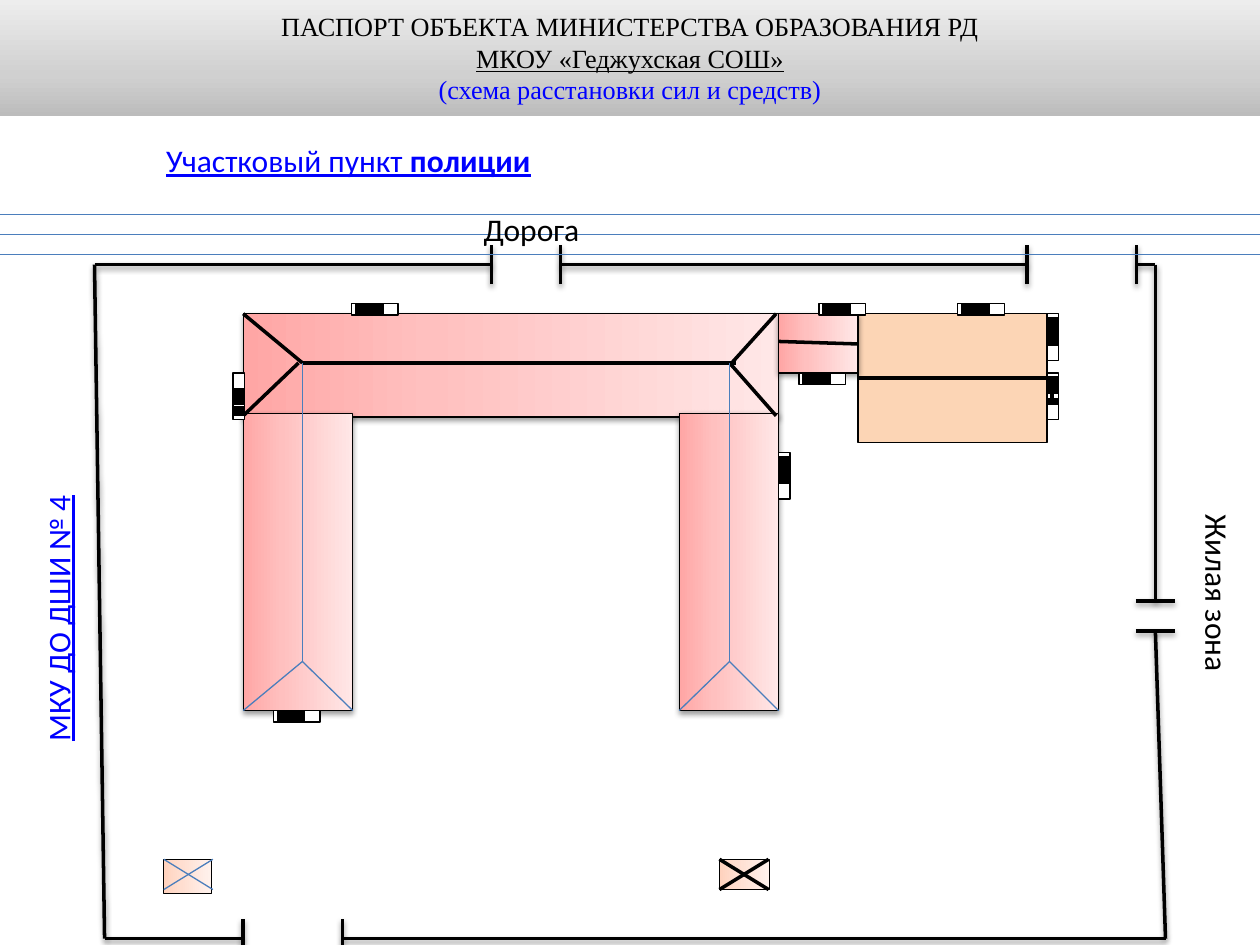
from copy import deepcopy
from dataclasses import dataclass

from lxml.etree import SubElement
from pptx import Presentation
from pptx.dml.color import RGBColor
from pptx.enum.shapes import MSO_CONNECTOR, MSO_SHAPE
from pptx.enum.text import MSO_ANCHOR, MSO_AUTO_SIZE, PP_ALIGN
from pptx.oxml.ns import qn
from pptx.util import Inches, Pt

BLACK = RGBColor(0x00, 0x00, 0x00)
WHITE = RGBColor(0xFF, 0xFF, 0xFF)
LINK_BLUE = RGBColor(0x00, 0x00, 0xFF)
LINE_BLUE = RGBColor(0x4B, 0x7E, 0xBC)
GYM = RGBColor(0xFC, 0xD5, 0xB5)
GREYS = [RGBColor.from_string(code) for code in ("BCBCBC", "D0D0D0", "EDEDED")]
REDS = [RGBColor.from_string(code) for code in ("FFA6A5", "FFC0BF", "FFE7E7")]
PEACHES = [RGBColor.from_string(code) for code in ("FFD2BD", "FFDED0", "FFF2ED")]

WIDTH, HEIGHT = Inches(10), Inches(7.5)
UNIT = WIDTH / 100  # the slide is a grid of 100 columns by 75 rows
STAIR_LENGTH, STAIR_DEPTH = 3.7, 0.9


@dataclass
class Box:
    """A region measured in grid columns and rows."""
    left: float
    top: float
    width: float
    height: float

    def area(self, left, top, width, height):
        return Box(self.left + left, self.top + top, width, height)

    def point(self, x, y):
        return self.left + x, self.top + y

    def frame(self, turn=0):
        """Position and size before a turn that leaves the box filled."""
        width, height = self.width, self.height
        if turn % 180:
            width, height = height, width
        left = self.left + (self.width - width) / 2
        top = self.top + (self.height - height) / 2
        return [round(value * UNIT) for value in (left, top, width, height)]


# Drawing helpers
def set_shadow(item, visible):
    effects = SubElement(item._element.spPr, qn("a:effectLst"))
    if visible:
        shadow = SubElement(effects, qn("a:outerShdw"), blurRad="40000",
                            dist="20000", dir="5400000", rotWithShape="0")
        color = SubElement(shadow, qn("a:srgbClr"), val="000000")
        SubElement(color, qn("a:alpha"), val="38000")


def add_line(shapes, start, end, color=BLACK, weight=0.0, shadow=False):
    ends = [round(value * UNIT) for value in (*start, *end)]
    line = shapes.add_connector(MSO_CONNECTOR.STRAIGHT, *ends)
    line.line.color.rgb = color
    line.line.width = Pt(weight)
    set_shadow(line, shadow)


def add_block(shapes, box, colors, turn=90, outline=True, shadow=False):
    """A rectangle with one plain colour or a three-step gradient."""
    block = shapes.add_shape(MSO_SHAPE.RECTANGLE, *box.frame(turn))
    block.rotation = turn
    if isinstance(colors, list):
        block.fill.gradient()
        block.fill.gradient_angle = 90
        stops = next(block._element.spPr.iter(qn("a:gsLst")))
        stops.insert(1, deepcopy(stops[0]))
        for stop, color, share in zip(block.fill.gradient_stops, colors, (0, 0.35, 1)):
            stop.color.rgb = color
            stop.position = share
    else:
        block.fill.solid()
        block.fill.fore_color.rgb = colors
    if outline:
        block.line.color.rgb = BLACK
        block.line.width = Pt(0)
    else:
        block.line.fill.background()
    set_shadow(block, shadow)
    return block


def style_run(span, font, size, color, underline=False):
    span.font.name = font
    span.font.size = Pt(size)
    span.font.color.rgb = color
    span.font.underline = underline


def add_label(page, box, text, color=BLACK, turn=0, wrap=True):
    label = page.shapes.add_textbox(*box.frame(turn))
    label.rotation = turn
    label.text_frame.word_wrap = wrap
    label.text_frame.auto_size = MSO_AUTO_SIZE.SHAPE_TO_FIT_TEXT
    para = label.text_frame.paragraphs[0]
    para.text = text
    style_run(para.runs[0], "Calibri", 18, color, color == LINK_BLUE)
    return para


def add_stairs(page, box, left, top, turn, crossed=None):
    """Steps on a porch; the step numbered crossed runs the other way."""
    sizes = (STAIR_LENGTH, STAIR_DEPTH) if turn == 90 else (STAIR_DEPTH, STAIR_LENGTH)
    porch = box.area(left, top, *sizes)
    group = page.shapes.add_group_shape()
    add_block(group.shapes, porch, WHITE, turn)
    first = 1.3 if turn == 0 else 0.4
    for step in range(8):
        offset = first + step * 2 / 7
        if step == crossed:
            start, end = (0.4, offset - 0.45), (0.4, offset + 0.45)
        elif turn == 90:
            start, end = (offset, 0), (offset, STAIR_DEPTH)
        else:
            start, end = (0, offset), (STAIR_DEPTH, offset)
        add_line(group.shapes, porch.point(*start), porch.point(*end))


# Regions
def draw_header(page, box):
    banner = add_block(page.shapes, box, GREYS, turn=0, outline=False)
    frame = banner.text_frame
    frame.word_wrap = True
    frame.vertical_anchor = MSO_ANCHOR.MIDDLE
    frame.text = ("ПАСПОРТ ОБЪЕКТА МИНИСТЕРСТВА ОБРАЗОВАНИЯ РД\n"
                  "МКОУ «Геджухская СОШ»\n(схема расстановки сил и средств)")
    styles = ((BLACK, False), (BLACK, True), (LINK_BLUE, False))
    for para, (color, underline) in zip(frame.paragraphs, styles):
        para.alignment = PP_ALIGN.CENTER
        style_run(para.runs[0], "Times New Roman", 15, color, underline)


def draw_gatehouse(page, box, color, weight):
    add_block(page.shapes, box, PEACHES)
    for start, end in ((0, 2.4), (2.4, 0)):
        add_line(page.shapes, box.point(0, start), box.point(3.9, end), color, weight)


def draw_school(page, box):
    # Buildings
    add_block(page.shapes, box.area(48.8, 0, 15, 10.2), GYM)
    for wing in ((0, 0, 42.5, 8.2), (0, 7.9, 8.7, 23.6),
                 (42.5, 0, 6.3, 4.7), (34.6, 7.9, 7.9, 23.6)):
        add_block(page.shapes, box.area(*wing), REDS, shadow=True)
    # Roof ridges
    for start, end in (((39.1, 3.9), (4.7, 3.9)), ((42.3, 8.1), (38.6, 3.9)),
                       ((42.3, 0), (38.6, 4.1)), ((4.4, 3.9), (0, 8.1)),
                       ((4.7, 3.9), (0, 0)), ((42.5, 2.2), (48.8, 2.4)),
                       ((48.8, 5.1), (63.8, 5.1))):
        add_line(page.shapes, box.point(*start), box.point(*end))
    for ridge, left, right in ((4.7, 0, 8.7), (38.6, 34.6, 42.5)):
        peak = box.point(ridge, 27.6)
        for end in ((ridge, 3.9), (left, 31.5), (right, 31.5)):
            add_line(page.shapes, peak, box.point(*end), LINE_BLUE, 0.75)
    # Porches
    for left, top, turn in ((42.5, 11, 180), (-0.8, 4.7, 0), (45.7, -0.8, 90),
                            (8.6, -0.8, 90), (44.1, 4.7, 90), (2.4, 31.5, 90),
                            (63.8, 0, 180), (56.7, -0.8, 90)):
        add_stairs(page, box, left, top, turn)
    add_stairs(page, box, 63.8, 4.7, 180, crossed=5)


def draw_fence(page, box):
    bottom, right, post = box.height, box.width, 1.55
    side = right - 0.8
    walls = [((37, 0), (74, 0)), ((0, 0), (31.5, 0)), ((0, 0), (0.8, bottom)),
             ((0.8, bottom), (11.8, bottom)), ((19.7, bottom), (right, bottom)),
             ((side, 29.1), (right, bottom)), ((side, 0), (side, 26.7)),
             ((82.7, 0), (side, 0))]
    gates = [((x, y + post), (x, y - post)) for x, y in
             ((31.5, 0), (37, 0), (74, 0), (82.7, 0), (11.8, bottom), (19.7, bottom))]
    gates += [((side - post, y), (side + post, y)) for y in (26.7, 29.1)]
    for start, end in walls + gates:
        add_line(page.shapes, box.point(*start), box.point(*end), weight=2, shadow=True)


def draw_road(page, box):
    for row in range(3):
        y = row * box.height / 2
        add_line(page.shapes, box.point(0, y), box.point(box.width, y), LINE_BLUE, 0.75)
    add_label(page, box.area(37.4, -0.8, 15.7, 4), "Дорога")


def draw_surroundings(page, box):
    add_label(page, box.area(94.65, 39.85, 4, 16.5), "Жилая зона", turn=90)
    add_label(page, box.area(2.6, 38, 4, 21.8), "МКУ ДО ДШИ № 4", LINK_BLUE, turn=270)
    police = add_label(page, box.area(12.2, 10.7, 31.2, 4), "Участковый пункт ",
                       LINK_BLUE, wrap=False)
    span = police.add_run()
    span.text = "полиции"
    style_run(span, "Calibri", 18, LINK_BLUE, True)
    span.font.bold = True


def main():
    deck = Presentation()
    deck.slide_width, deck.slide_height = WIDTH, HEIGHT
    page = deck.slides.add_slide(deck.slide_layouts[6])
    draw_header(page, Box(0, 0, 100, 9.2))
    draw_gatehouse(page, Box(13, 68.2, 3.8, 2.7), LINE_BLUE, 0.75)
    draw_gatehouse(page, Box(57.1, 68.2, 4, 2.4), BLACK, 0)
    draw_school(page, Box(19.3, 24.9, 63.8, 31.5))
    draw_fence(page, Box(7.5, 21, 85, 53.5))
    draw_road(page, Box(0, 17, 100, 3.2))
    draw_surroundings(page, Box(0, 0, 100, 75))
    deck.save("out.pptx")


if __name__ == "__main__":
    main()
